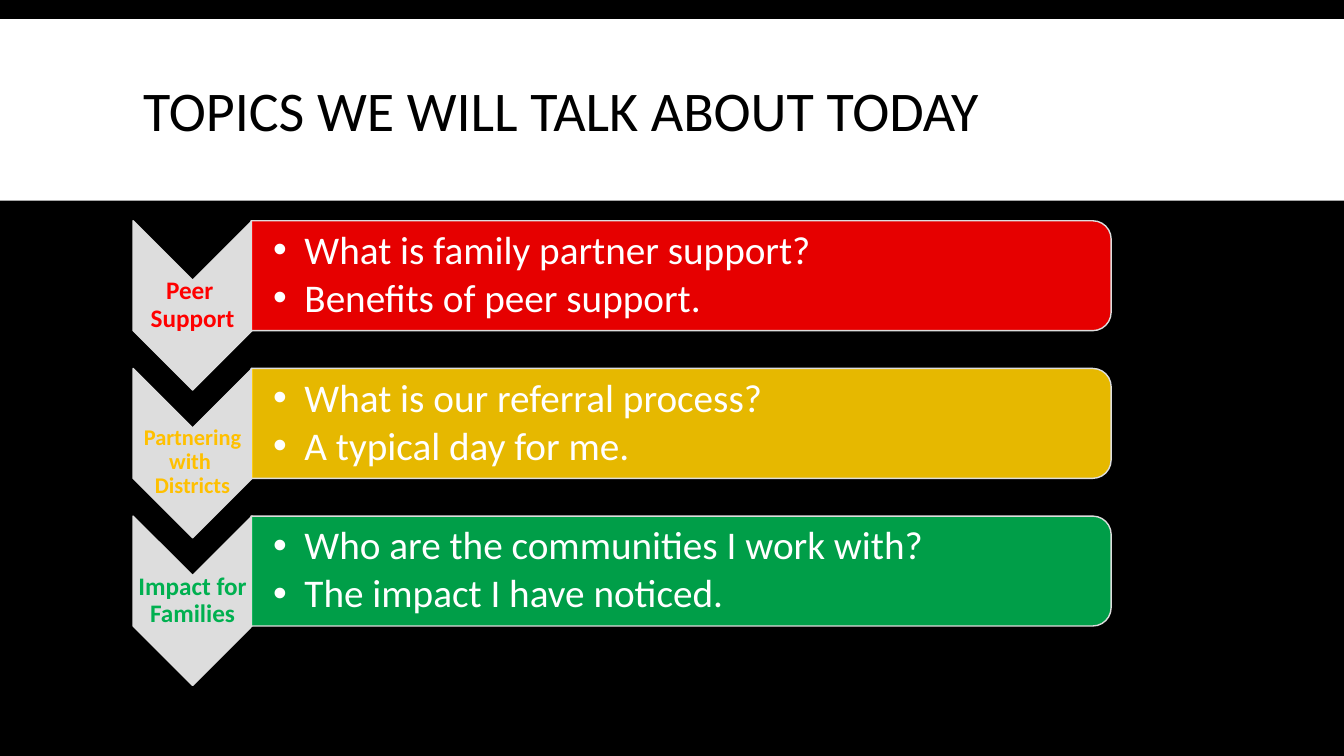
from lxml import etree
from pptx import Presentation
from pptx.dml.color import RGBColor
from pptx.enum.shapes import MSO_SHAPE
from pptx.enum.text import MSO_ANCHOR, MSO_AUTO_SIZE, PP_ALIGN
from pptx.oxml.ns import qn
from pptx.util import Inches, Pt

TITLE = "TOPICS WE WILL TALK ABOUT TODAY"
TOPICS = [
    {"label": ["Peer ", "Support"], "size": 18, "drop": 0,
     "color": "FF0000", "bar": "FF0000",
     "points": ["What is family partner support?", "Benefits of peer support."]},
    {"label": ["Partnering", "with ", "Districts"], "size": 16, "drop": 0.18,
     "color": "FFC000", "bar": "FFCC00",
     "points": ["What is our referral process?", "A typical day for me."]},
    {"label": ["Impact for", "Families"], "size": 18, "drop": 0,
     "color": "00B050", "bar": "00B050",
     "points": ["Who are the communities I work with?", "The impact I have noticed."]},
]
WIDTH, HEIGHT = 13.33, 7.5
LEFT, TOP, PITCH = 1.32, 2.19, 1.465
CHEVRON_W, CHEVRON_H = 1.18, 1.68
BAR_W, BAR_H = 8.53, 1.09
BAR_LEFT = LEFT + CHEVRON_W - 0.01
GREY, WHITE, BLACK = "DDDDDD", "FFFFFF", "000000"


def rgb(value):
    return RGBColor.from_string(value)


def add_solid(s, kind, x, y, w, h, fill, line=None, turned=False):
    if turned:
        x, y, w, h = x + (w - h) / 2, y + (h - w) / 2, h, w
    sp = s.shapes.add_shape(kind, Inches(x), Inches(y), Inches(w), Inches(h))
    sp.rotation = 90 if turned else 0
    sp.shadow.inherit = False
    sp.fill.solid()
    sp.fill.fore_color.rgb = rgb(fill)
    if line:
        sp.line.color.rgb = rgb(line)
        sp.line.width = Pt(1)
    else:
        sp.line.fill.background()
    return sp


def add_text_box(s, x, y, w, h, insets):
    tf = s.shapes.add_textbox(Inches(x), Inches(y), Inches(w), Inches(h)).text_frame
    tf.word_wrap = True
    tf.auto_size = MSO_AUTO_SIZE.NONE
    tf.vertical_anchor = MSO_ANCHOR.MIDDLE
    tf.margin_left, tf.margin_top, tf.margin_right, tf.margin_bottom = map(Inches, insets)
    return tf


def add_run(p, text, size, color, bold=False):
    r = p.add_run()
    r.text = text
    r.font.name = "Calibri"
    r.font.size = Pt(size)
    r.font.bold = bold
    r.font.color.rgb = rgb(color)


def add_bullet(p):
    pPr = p._p.get_or_add_pPr()
    pPr.set("marL", str(Inches(0.31)))
    pPr.set("indent", str(-Inches(0.31)))
    etree.SubElement(pPr, qn("a:buFont")).set("typeface", "Arial")
    etree.SubElement(pPr, qn("a:buChar")).set("char", "•")


def add_topic(s, row, topic):
    y = TOP + row * PITCH
    add_solid(s, MSO_SHAPE.CHEVRON, LEFT, y, CHEVRON_W, CHEVRON_H, GREY, GREY, True)
    tf = add_text_box(s, LEFT, y + CHEVRON_W / 2, CHEVRON_W, CHEVRON_H - CHEVRON_W,
                      (0.01, 0.01 + topic["drop"], 0.01, 0.01))
    p = tf.paragraphs[0]
    p.alignment = PP_ALIGN.CENTER
    p.line_spacing = 0.9
    for i, line in enumerate(topic["label"]):
        if i:
            p.add_line_break()
        add_run(p, line, topic["size"], topic["color"], True)

    bar = add_solid(s, MSO_SHAPE.ROUND_2_SAME_RECTANGLE, BAR_LEFT, y, BAR_W, BAR_H,
                    topic["bar"], GREY, True)
    color = bar._element.spPr.find(qn("a:solidFill"))[0]
    etree.SubElement(color, qn("a:alpha")).set("val", "90000")
    tf = add_text_box(s, BAR_LEFT, y + 0.05, BAR_W - 0.06, BAR_H - 0.1,
                      (0.22, 0.02, 0.02, 0.02))
    for i, point in enumerate(topic["points"]):
        p = tf.add_paragraph() if i else tf.paragraphs[0]
        add_bullet(p)
        p.line_spacing = 0.9
        p.space_after = Pt(4)
        add_run(p, point, 28, WHITE)


def main():
    prs = Presentation()
    prs.slide_width, prs.slide_height = Inches(WIDTH), Inches(HEIGHT)
    s = prs.slides.add_slide(prs.slide_layouts[5])
    s.background.fill.solid()
    s.background.fill.fore_color.rgb = rgb(BLACK)

    band = add_solid(s, MSO_SHAPE.RECTANGLE, 0, 0.19, WIDTH, 1.8, WHITE)
    title = s.shapes.title
    title._element.addprevious(band._element)
    title.left, title.top = Inches(LEFT), Inches(0.31)
    title.width, title.height = Inches(10.7), Inches(1.65)
    tf = title.text_frame
    tf.vertical_anchor = MSO_ANCHOR.MIDDLE
    p = tf.paragraphs[0]
    p.alignment = PP_ALIGN.LEFT
    p.line_spacing = 0.85
    add_run(p, TITLE, 40, BLACK)

    for row, topic in enumerate(TOPICS):
        add_topic(s, row, topic)
    prs.save("out.pptx")


if __name__ == "__main__":
    main()
